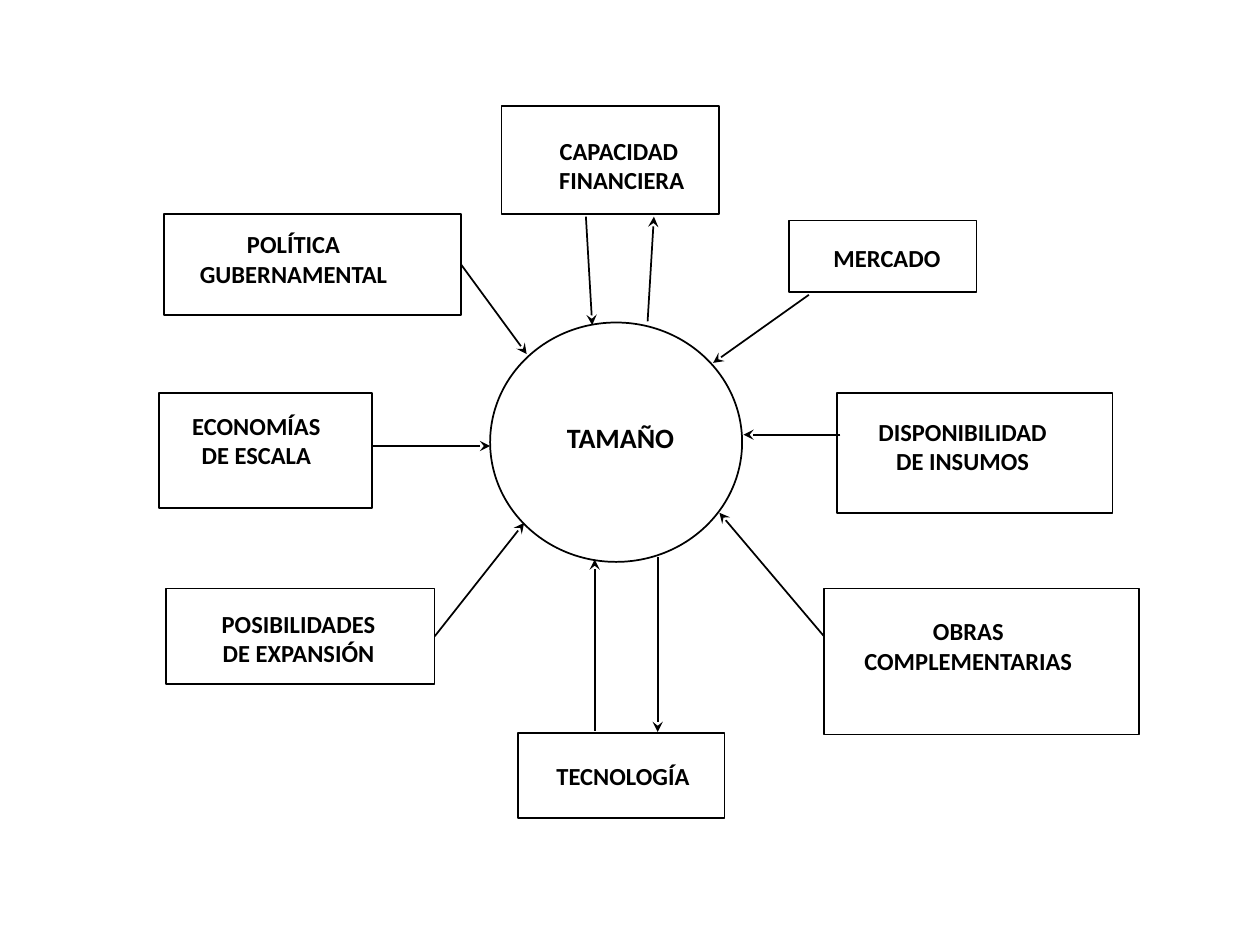
from dataclasses import dataclass
from pptx import Presentation
from pptx.dml.color import RGBColor as Color
from pptx.enum.shapes import MSO_CONNECTOR as Link, MSO_SHAPE as Shape
from pptx.enum.text import MSO_AUTO_SIZE as Fit, PP_ALIGN as Align
from pptx.oxml.ns import qn
from pptx.util import Inches, Pt
from lxml.etree import SubElement


@dataclass(frozen=True)
class Theme:
    ink: Color = Color(0, 0, 0)
    font: str = "Calibri"
    hub: int = 16
    factor: int = 14
    line: int = 1


THEME = Theme()
RIGHT = 3

HUB = ("TAMAÑO", (3.89, 2.56, 2, 1.9), (0.49, 0.72, 1.09, 0.38))

FACTORS = {
    "market": ("MERCADO", (6.26, 1.75, 1.49, 0.57), (0.24, 0.12, 1.08, 0.35)),
    "finance": ("CAPACIDAD \nFINANCIERA", (3.98, 0.84, 1.73, 0.86), (0.34, 0.18, 1.23, 0.58)),
    "inputs": ("DISPONIBILIDAD\nDE INSUMOS", (6.64, 3.12, 2.19, 0.95), (0.21, 0.13, 1.58, 0.58)),
    "works": ("OBRAS\nCOMPLEMENTARIAS", (6.54, 4.67, 2.5, 1.16), (0.2, 0.16, 1.89, 0.58)),
    "growth": ("POSIBILIDADES\nDE EXPANSIÓN", (1.32, 4.67, 2.13, 0.76), (0.32, 0.1, 1.46, 0.58)),
    "policy": ("POLÍTICA\nGUBERNAMENTAL", (1.3, 1.7, 2.36, 0.8), (0.17, 0.06, 1.72, 0.58)),
    "scale": ("ECONOMÍAS\nDE ESCALA", (1.26, 3.12, 1.69, 0.91), (0.15, 0.08, 1.25, 0.58)),
    "tech": ("TECNOLOGÍA", (4.11, 5.82, 1.64, 0.67), (0.19, 0.16, 1.29, 0.35)),
}

ARROWS = [
    ((3.45, 5.05), (4.16, 4.15), "growth"),
    ((2.96, 3.54), (3.89, 3.54), None),
    ((3.66, 2.1), (4.18, 2.81), "policy"),
    ((4.65, 1.72), (4.7, 2.58), None),
    ((5.14, 2.55), (5.19, 1.72), None),
    ((6.42, 2.34), (5.66, 2.88), None),
    ((6.67, 3.45), (5.9, 3.45), None),
    ((6.54, 5.05), (5.71, 4.07), None),
    ((4.72, 5.8), (4.72, 4.44), None),
    ((5.22, 4.42), (5.22, 5.81), None),
]


def add_label(slide, text, area, size):
    box = slide.shapes.add_textbox(*map(Inches, area))
    frame = box.text_frame
    frame.text = text
    frame.word_wrap = False
    frame.auto_size = Fit.SHAPE_TO_FIT_TEXT
    frame.margin_left = frame.margin_right = Inches(0.11)
    frame.margin_top = frame.margin_bottom = Inches(0.06)
    for para in frame.paragraphs:
        para.alignment = Align.CENTER
        for run in para.runs:
            font = run.font
            font.name, font.size, font.bold = THEME.font, Pt(size), True
            font.color.rgb = THEME.ink


def style_line(line):
    line.color.rgb = THEME.ink
    line.width = Pt(THEME.line)


def add_node(slide, kind, node, size):
    text, box, label = node
    left, top = box[:2]
    shift, drop, width, height = label
    add_label(slide, text, (left + shift, top + drop, width, height), size)
    shape = slide.shapes.add_shape(kind, *map(Inches, box))
    shape.shadow.inherit = False
    shape.fill.background()
    style_line(shape.line)
    return shape


def add_arrow(slide, start, end, source):
    arrow = slide.shapes.add_connector(Link.STRAIGHT, *map(Inches, start + end))
    if source is not None:
        arrow.begin_connect(source, RIGHT)
    style_line(arrow.line)
    SubElement(arrow.line._get_or_add_ln(), qn("a:tailEnd"), type="stealth")
    SubElement(arrow._element.spPr, qn("a:effectLst"))


def add_diagram(slide):
    add_node(slide, Shape.OVAL, HUB, THEME.hub)
    nodes = {
        name: add_node(slide, Shape.RECTANGLE, node, THEME.factor)
        for name, node in FACTORS.items()
    }
    for start, end, source in ARROWS:
        add_arrow(slide, start, end, nodes.get(source))


def main():
    deck = Presentation()
    deck.slide_width, deck.slide_height = Inches(10), Inches(7.5)
    add_diagram(deck.slides.add_slide(deck.slide_layouts[6]))
    deck.save("out.pptx")


if __name__ == "__main__":
    main()
